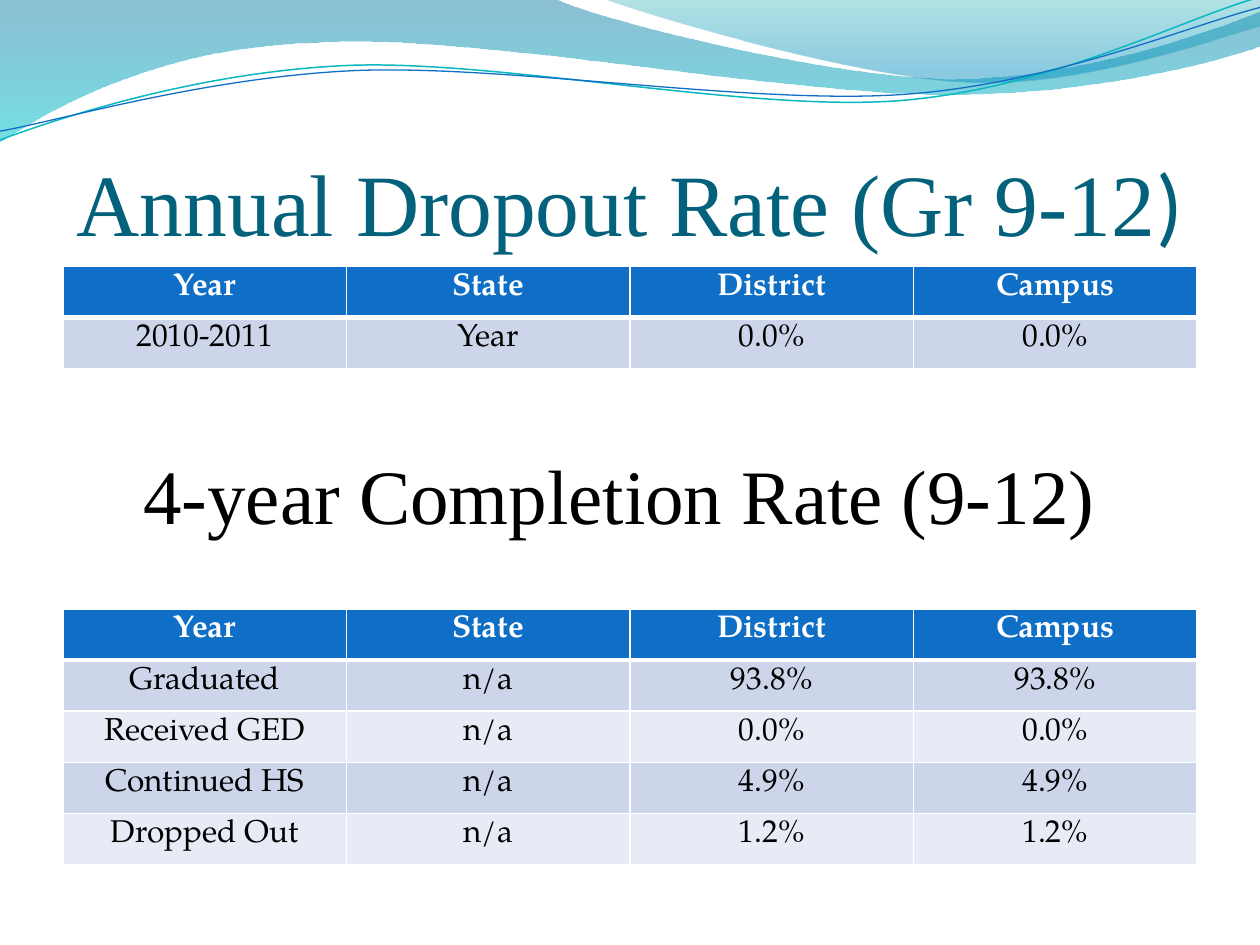
import math
from dataclasses import dataclass

from lxml import etree
from pptx import Presentation
from pptx import util as u
from pptx.dml.color import RGBColor
from pptx.enum import text
from pptx.oxml import ns

Pt = u.Pt


@dataclass(frozen=True)
class Theme:
    """Colours, fonts and type sizes of the slide."""
    title: str = "04617B"
    black: str = "000000"
    white: str = "FFFFFF"
    blue: str = "0F6FC6"
    teal: str = "0AB8BF"
    bands: tuple = ("CCD5EA", "E7EBF5")
    swoosh: tuple = ((0, "0074A1", 45), (1, "00C6CF", 55))
    highlight: tuple = ((0, "00A1A9", 30), (0.8, "008BBF", 45))
    serif: str = "Times New Roman"
    sans: str = "Calibri"
    table_font: str = "TeX Gyre Pagella"
    title_size: int = 50
    subtitle_size: int = 44
    table_size: int = 18


THEME = Theme()
WAVE_TILT = -2.7

SWOOSH = [(0, 0), (317, -0.7), (343, 12, 478, 45, 546, 45), (614, 45, 690, 19, 720, 6.5),
          (720.7, 26), (708, 32, 626, 55, 537, 54), (446, 54, 275, 20, 185, 24.3),
          (93, 26, 33, 60, -0.7, 81.4)]
HIGHLIGHT = [(345, -0.7), (367, 8, 491, 45, 554, 47), (616, 50, 692, 23, 720, 15), (720, 0)]
TEAL_WAVE = [(0, 80), (35, 67, 114, 41, 199, 37.4), (284, 34, 427, 64, 513, 57.6),
             (600, 51, 675, 11, 719, -1.4)]
BLUE_WAVE = [(0, 75), (34, 69, 118, 44, 204, 40.3), (290, 37, 430, 60, 516, 54),
             (602, 48, 678, 15, 720, 4.3)]

DROPOUT = [("Year", "State", "District", "Campus"),
           ("2010-2011", "Year", "0.0%", "0.0%")]
COMPLETION = [("Year", "State", "District", "Campus"),
              ("Graduated", "n/a", "93.8%", "93.8%"),
              ("Received GED", "n/a", "0.0%", "0.0%"),
              ("Continued HS", "n/a", "4.9%", "4.9%"),
              ("Dropped Out", "n/a", "1.2%", "1.2%")]


def rgb(value):
    """Return a colour from its hex string."""
    return RGBColor.from_string(value)


def turn(point, center, degrees):
    """Rotate a point clockwise about a center."""
    a = math.radians(degrees)
    dx, dy = point[0] - center[0], point[1] - center[1]
    return (center[0] + dx * math.cos(a) - dy * math.sin(a),
            center[1] + dx * math.sin(a) + dy * math.cos(a))


def add_outline(s, box, path, close, tilt=0):
    """Draw a freeform of lines and cubic curves relative to the box."""
    left, top, width, height = box
    center = (width / 2, height / 2)
    points = [turn(seg[i:i + 2], center, -tilt) for seg in path for i in range(0, len(seg), 2)]
    points = [(Pt(left + x), Pt(top + y)) for x, y in points]
    builder = s.shapes.build_freeform(*points[0])
    builder.add_line_segments(points[1:], close=close)
    sp = builder.convert_to_shape()
    sp.shadow.inherit = False
    sp.rotation = tilt
    lines = iter(list(sp._element.iter(ns.qn("a:lnTo"))))
    for seg in path[1:]:
        first = next(lines)
        if len(seg) == 6:
            curve = etree.Element(ns.qn("a:cubicBezTo"))
            first.addprevious(curve)
            for line in (first, next(lines), next(lines)):
                curve.append(line[0])
                line.getparent().remove(line)
    return sp


def add_waves(s, box):
    """Place the translucent swooshes and the two wave lines."""
    for path, stops in ((SWOOSH, THEME.swoosh), (HIGHLIGHT, THEME.highlight)):
        sp = add_outline(s, box, path, True)
        sp.line.fill.background()
        sp.fill.gradient()
        sp.fill.gradient_angle = 270
        for stop, (position, color, _) in zip(sp.fill.gradient_stops, stops):
            stop.position = position
            stop.color.rgb = rgb(color)
        colors = sp._element.spPr.iter(ns.qn("a:srgbClr"))
        for node, (_, _, opacity) in zip(list(colors), stops):
            etree.SubElement(node, ns.qn("a:alpha"), val=str(opacity * 1000))
    for path, color, width in ((TEAL_WAVE, THEME.teal, 0.85), (BLUE_WAVE, THEME.blue, 0.75)):
        sp = add_outline(s, box, path, False, WAVE_TILT)
        sp.fill.background()
        sp.line.color.rgb = rgb(color)
        sp.line.width = Pt(width)


def style_run(r, size, font, color, bold=False):
    """Format one run."""
    r.font.size, r.font.name, r.font.bold = Pt(size), font, bold
    r.font.color.rgb = rgb(color)


def add_heading(s, box, parts, size, color, anchor, side_inset):
    """Place a centred one-line heading made of (text, font) parts."""
    tf = s.shapes.add_textbox(*map(Pt, box)).text_frame
    tf.word_wrap = True
    tf.vertical_anchor = anchor
    tf.margin_left = tf.margin_right = Pt(side_inset)
    tf.margin_bottom = Pt(0 if anchor == text.MSO_ANCHOR.BOTTOM else 3.6)
    p = tf.paragraphs[0]
    p.alignment = text.PP_ALIGN.CENTER
    for words, font in parts:
        r = p.add_run()
        r.text = words
        style_run(r, size, font, color)


def add_borders(cell, widths):
    """Give a cell white borders, widths keyed by side."""
    tc_pr = cell._tc.get_or_add_tcPr()
    for side, width in widths.items():
        ln = etree.SubElement(tc_pr, ns.qn(f"a:ln{side}"), w=str(Pt(width)))
        fill = etree.SubElement(ln, ns.qn("a:solidFill"))
        etree.SubElement(fill, ns.qn("a:srgbClr"), val=THEME.white)


def add_rate_table(s, box, rows):
    """Place a table with a blue header and banded body rows."""
    table = s.shapes.add_table(len(rows), len(rows[0]), *map(Pt, box)).table
    for i, row in enumerate(rows):
        header = i == 0
        fill = THEME.blue if header else THEME.bands[(i - 1) % 2]
        color = THEME.white if header else THEME.black
        for j, value in enumerate(row):
            cell = table.cell(i, j)
            add_borders(cell, {"L": 1, "R": 1, "T": 3 if i == 1 else 1, "B": 3 if header else 1})
            cell.fill.solid()
            cell.fill.fore_color.rgb = rgb(fill)
            cell.text_frame.text = value
            p = cell.text_frame.paragraphs[0]
            p.alignment = text.PP_ALIGN.CENTER
            style_run(p.runs[0], THEME.table_size, THEME.table_font, color, header)


def main():
    """Build and save the slide."""
    prs = Presentation()
    prs.slide_width, prs.slide_height = Pt(720), Pt(540)
    s = prs.slides.add_slide(prs.slide_layouts[6])
    add_waves(s, (0, 0, 720, 82))
    add_heading(s, (36, 55, 648, 90),
                [("Annual Dropout Rate (Gr 9-12", THEME.serif), (")", THEME.sans)],
                THEME.title_size, THEME.title, text.MSO_ANCHOR.BOTTOM, 0)
    add_rate_table(s, (36, 152.2, 648, 58.4), DROPOUT)
    add_heading(s, (72, 252, 564, 60.5), [("4-year Completion Rate (9-12)", THEME.serif)],
                THEME.subtitle_size, THEME.black, text.MSO_ANCHOR.TOP, 7.2)
    add_rate_table(s, (36, 348, 648, 146), COMPLETION)
    prs.save("out.pptx")


if __name__ == "__main__":
    main()
